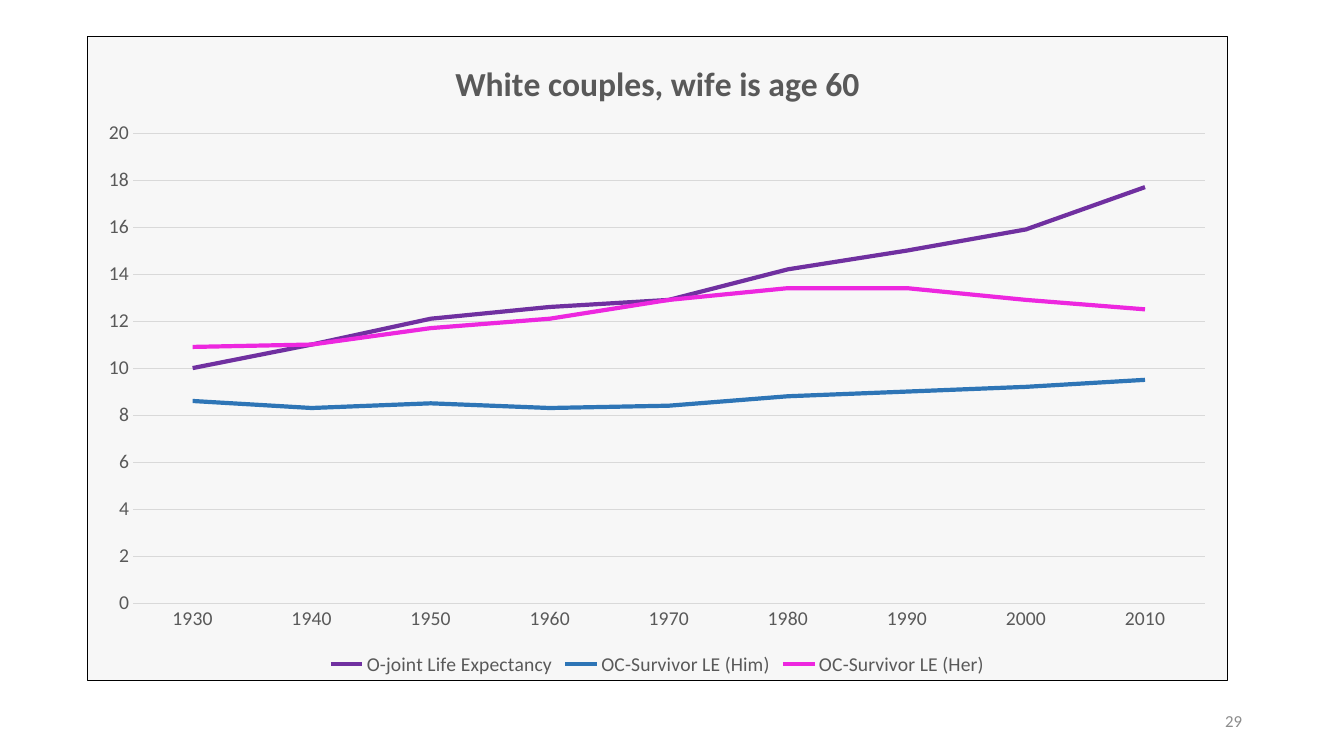
from lxml import etree
from pptx import Presentation
from pptx.chart.data import CategoryChartData
from pptx.dml.color import RGBColor
from pptx.enum.chart import XL_CHART_TYPE as Kind, XL_LEGEND_POSITION as Spot, XL_TICK_MARK as Tick
from pptx.enum.text import MSO_ANCHOR as Anchor, PP_ALIGN as Align
from pptx.oxml import parse_xml
from pptx.oxml.ns import nsdecls, qn
from pptx.util import Pt

PX = 9144000 / 1008
HUES = {"joint": "7030A0", "him": "2E75B6", "her": "ED27DF", "text": "595959",
        "grid": "D9D9D9", "back": "F2F2F2", "edge": "000000", "page": "8C8C8C"}
FACE = "Calibri"


def px(*sizes):
    return [round(n * PX) for n in sizes]


def style(font, size, hue, bold=False):
    font.name, font.size, font.bold = FACE, Pt(size), bold
    font.color.rgb = RGBColor.from_string(HUES[hue])


deck = Presentation()
deck.slide_width, deck.slide_height = px(1344, 756)
slide = deck.slides.add_slide(deck.slide_layouts[6])

# Data
lines = [
    ("O-joint Life Expectancy", "joint", [10, 11, 12.1, 12.6, 12.9, 14.2, 15, 15.9, 17.7]),
    ("OC-Survivor LE (Him)", "him", [8.6, 8.3, 8.5, 8.3, 8.4, 8.8, 9, 9.2, 9.5]),
    ("OC-Survivor LE (Her)", "her", [10.9, 11, 11.7, 12.1, 12.9, 13.4, 13.4, 12.9, 12.5]),
]
data = CategoryChartData(number_format="0.0")
data.categories = [str(year) for year in range(1930, 2011, 10)]
for name, hue, vals in lines:
    data.add_series(name, vals)

# Chart
chart = slide.shapes.add_chart(Kind.LINE, *px(87, 36, 1141, 645), data).chart
style(chart.font, 14, "text")
chart.has_title = True
title = chart.chart_title
title.include_in_layout = False
run = title.text_frame.paragraphs[0].add_run()
run.text = "White couples, wife is age 60"
style(run.font, 24, "text", True)

chart.has_legend = True
chart.legend.position = Spot.BOTTOM
chart.legend.include_in_layout = False
style(chart.legend.font, 14, "text")

for plot_line, (name, hue, vals) in zip(chart.plots[0].series, lines):
    plot_line.smooth = False
    plot_line.format.line.width = Pt(3)
    plot_line.format.line.color.rgb = RGBColor.from_string(HUES[hue])

# Axes
years, ages = chart.category_axis, chart.value_axis
for axis in (years, ages):
    axis.major_tick_mark = axis.minor_tick_mark = Tick.NONE
    style(axis.tick_labels.font, 14, "text")
ages.minimum_scale, ages.maximum_scale, ages.major_unit = 0, 20, 2
ages.tick_labels.number_format = "#,##0"
ages.tick_labels.number_format_is_linked = False
ages.format.line.fill.background()
ages.has_major_gridlines = True
for rule in (years.format.line, ages.major_gridlines.format.line):
    rule.width = Pt(0.75)
    rule.color.rgb = RGBColor.from_string(HUES["grid"])

# Plot position and chart frame
area = chart._chartSpace.find(".//" + qn("c:plotArea"))
for old in area.findall(qn("c:layout")):
    area.remove(old)
layout = parse_xml(f'<c:layout {nsdecls("c")}><c:manualLayout/></c:layout>')
for tag, val in [("layoutTarget", "inner"), ("xMode", "edge"), ("yMode", "edge"),
                 ("x", 0.04), ("y", 0.15), ("w", 0.94), ("h", 0.73)]:
    etree.SubElement(layout[0], qn("c:" + tag)).set("val", str(val))
area.insert(0, layout)

frame = parse_xml(
    f'<c:spPr {nsdecls("c", "a")}>'
    f'<a:solidFill><a:srgbClr val="{HUES["back"]}"><a:alpha val="58000"/></a:srgbClr></a:solidFill>'
    f'<a:ln w="{Pt(0.75)}"><a:solidFill><a:srgbClr val="{HUES["edge"]}"/></a:solidFill></a:ln>'
    '</c:spPr>')
chart._chartSpace.find(qn("c:chart")).addnext(frame)

# Page number
text = slide.shapes.add_textbox(*px(950, 701, 302, 40)).text_frame
text.word_wrap = True
text.vertical_anchor = Anchor.MIDDLE
text.paragraphs[0].alignment = Align.RIGHT
run = text.paragraphs[0].add_run()
run.text = "29"
style(run.font, 12, "page")

deck.save("out.pptx")
